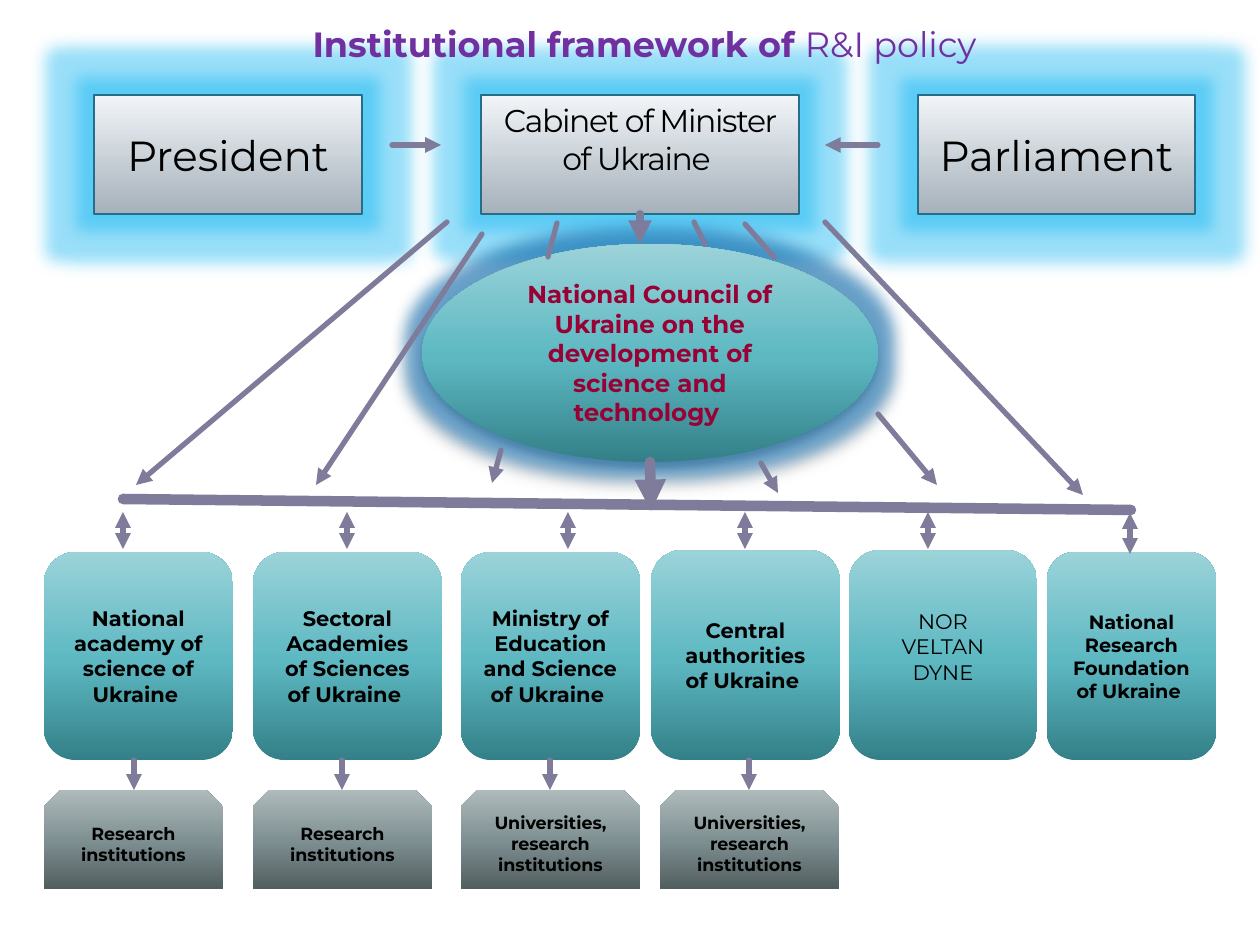
import pptx
import pptx.util
import pptx.dml.color
import pptx.enum.shapes
import pptx.enum.text
import pptx.oxml
import pptx.oxml.ns
from dataclasses import dataclass, field
from typing import NamedTuple

PX = 914400 / 126
FONT = "Montserrat"
ARROW = "7F7B9A"
SHAPE = pptx.enum.shapes.MSO_SHAPE
MIDDLE = pptx.enum.text.MSO_ANCHOR.MIDDLE
TOP = pptx.enum.text.MSO_ANCHOR.TOP
A = pptx.oxml.ns.nsdecls("a")


class Gradient(NamedTuple):
    stops: tuple[tuple[int, str], ...]
    angle: int


class Glow(NamedTuple):
    colour: str
    radius: int
    alpha: int


SILVER = Gradient(((0, "F1F5F8"), (100, "A6B1BA")), 270)
TEAL = Gradient(((0, "338088"), (48, "5DB8C2"), (100, "9BD3D9")), 90)
GREY = Gradient(((0, "515E60"), (48, "7E8F91"), (100, "AFBABB")), 90)
SKY = Glow("00B0F0", 32, 40)
BLUE = Glow("0070C0", 32, 50)


@dataclass
class Box:
    text: str
    x: int
    y: int
    w: int
    h: int
    kind: int
    fill: Gradient
    size: int
    bold: bool = True
    colour: str = "000000"
    outline: str = ""
    glow: Glow | None = None
    shadow: bool = False
    spacing: int = 0
    frame: dict = field(default_factory=lambda: {"vertical_anchor": MIDDLE})


class Line(NamedTuple):
    x1: int
    y1: int
    x2: int
    y2: int
    width: float = 3
    ends: tuple[str, ...] = ("tailEnd",)


def emu(px: float) -> int:
    return round(px * PX)


def rgb(colour: str) -> pptx.dml.color.RGBColor:
    return pptx.dml.color.RGBColor.from_string(colour)


def xml(tag: str, attrs: str = "", body: str = ""):
    return pptx.oxml.parse_xml(f"<a:{tag} {A} {attrs}>{body}</a:{tag}>")


def tint(colour: str, alpha: int = 100) -> str:
    return f'<a:srgbClr val="{colour}"><a:alpha val="{alpha * 1000}"/></a:srgbClr>'


def apply(target, values: dict) -> None:
    for name, value in values.items():
        setattr(target, name, value)


def add_run(p, text: str, size: int, bold: bool, colour: str):
    r = p.add_run()
    r.text = text
    apply(r.font, {"name": FONT, "size": pptx.util.Pt(size), "bold": bold})
    r.font.color.rgb = rgb(colour)
    return r


def paint(sp, gradient: Gradient) -> None:
    sp.fill.gradient()
    sp.fill.gradient_angle = gradient.angle
    stops = sp._element.spPr.find(".//" + pptx.oxml.ns.qn("a:gsLst"))
    stops[:] = [xml("gs", f'pos="{pos * 1000}"', f'<a:srgbClr val="{colour}"/>')
                for pos, colour in gradient.stops]


def add_effects(sp, box: Box) -> None:
    sp.shadow.inherit = False
    effects = sp._element.spPr.find(pptx.oxml.ns.qn("a:effectLst"))
    if box.glow:
        effects.append(xml("glow", f'rad="{emu(box.glow.radius)}"',
                           tint(box.glow.colour, box.glow.alpha)))
    if box.shadow:
        effects.append(xml("outerShdw", 'blurRad="50800" dist="38100" dir="5400000"',
                           tint("000000", 40)))


def draw_box(s, box: Box) -> None:
    sp = s.shapes.add_shape(box.kind, *map(emu, (box.x, box.y, box.w, box.h)))
    paint(sp, box.fill)
    add_effects(sp, box)
    if box.outline:
        sp.line.color.rgb = rgb(box.outline)
        sp.line.width = pptx.util.Pt(1.25)
    else:
        sp.line.fill.background()
    tf = sp.text_frame
    apply(tf, {"word_wrap": True, **box.frame})
    for i, text in enumerate(box.text.split("\n")):
        p = tf.add_paragraph() if i else tf.paragraphs[0]
        p.alignment = pptx.enum.text.PP_ALIGN.CENTER
        r = add_run(p, text, box.size, box.bold, box.colour)
        if box.spacing:
            r.font._element.set("spc", str(box.spacing))


def draw_line(s, line: Line) -> None:
    c = s.shapes.add_connector(pptx.enum.shapes.MSO_CONNECTOR.STRAIGHT, *map(emu, line[:4]))
    c.line.color.rgb = rgb(ARROW)
    c.line.width = pptx.util.Pt(line.width)
    ln = c.line._get_or_add_ln()
    ln.set("cap", "rnd")
    for end in line.ends:
        ln.append(xml(end, 'type="triangle"'))
    c._element.spPr.append(xml("effectLst"))


def draw_title(s) -> None:
    tf = s.shapes.add_textbox(*map(emu, (94, 16, 1101, 55))).text_frame
    tf.word_wrap = True
    p = tf.paragraphs[0]
    p.alignment = pptx.enum.text.PP_ALIGN.CENTER
    add_run(p, "Institutional framework of ", 20, True, "7030A0")
    add_run(p, "R&I policy", 20, False, "7030A0")


def power(text: str, x: int, w: int, size: int = 24, **extra) -> Box:
    return Box(text, x, 95, w, 119, SHAPE.RECTANGLE, SILVER, size, bold=False,
               outline="266D8A", glow=SKY, **extra)


def body(text: str, x: int, w: int, top: int = 552, size: int = 12, **extra) -> Box:
    return Box(text, x, top, w, 760 - top, SHAPE.ROUNDED_RECTANGLE, TEAL, size, **extra)


def institution(text: str, x: int) -> Box:
    return Box(text, x, 790, 179, 99, SHAPE.SNIP_2_SAME_RECTANGLE, GREY, 10)


BOXES = [
    power("President", 94, 268),
    power("Cabinet of Minister of Ukraine ", 481, 318, 18, spacing=-80,
          frame={"vertical_anchor": TOP}),
    power("Parliament", 918, 277),
    Box("National Council of Ukraine on the development of science and technology ",
        422, 244, 456, 218, SHAPE.OVAL, TEAL, 14, colour="990033", glow=BLUE, shadow=True),
    body("National academy of science of Ukraine ", 44, 189),
    body("Sectoral Academies of Sciences of Ukraine ", 253, 189),
    body("Ministry of Education and Science of Ukraine ", 461, 179),
    body("Central authorities of Ukraine ", 651, 189, 550),
    body("NOR\nVELTAN\nDYNE", 849, 188, 550, bold=False,
         frame={"vertical_anchor": MIDDLE, "margin_bottom": emu(23)}),
    body("National Research Foundation of Ukraine ", 1047, 169, size=11),
    *(institution("Research institutions", x) for x in (44, 253)),
    *(institution("Universities, research institutions", x) for x in (461, 660)),
]

BOTH = ("headEnd", "tailEnd")
LINES = [
    Line(640, 214, 640, 244, 4.5),
    Line(447, 222, 136, 485), Line(482, 234, 316, 485), Line(825, 222, 1083, 495),
    Line(650, 462, 651, 511, 6), Line(123, 499, 1131, 510, 6, ()),
    *(Line(x, 512, x, 549, ends=BOTH) for x in (123, 347, 568, 745, 928)),
    Line(1130, 513, 1130, 554, ends=BOTH),
    *(Line(x, 760, x, 790) for x in (134, 342, 550, 749)),
    Line(557, 223, 548, 257, ends=()), Line(745, 224, 774, 257, ends=()),
    Line(694, 222, 705, 244, ends=()),
    Line(501, 450, 492, 483), Line(878, 414, 937, 485), Line(761, 463, 778, 493),
    Line(392, 145, 441, 145), Line(878, 145, 825, 145),
]


def main() -> None:
    prs = pptx.Presentation()
    prs.slide_width, prs.slide_height = emu(1260), emu(945)
    s = prs.slides.add_slide(prs.slide_layouts[6])
    for box in BOXES:
        draw_box(s, box)
    for line in LINES:
        draw_line(s, line)
    draw_title(s)
    prs.save("out.pptx")


if __name__ == "__main__":
    main()
